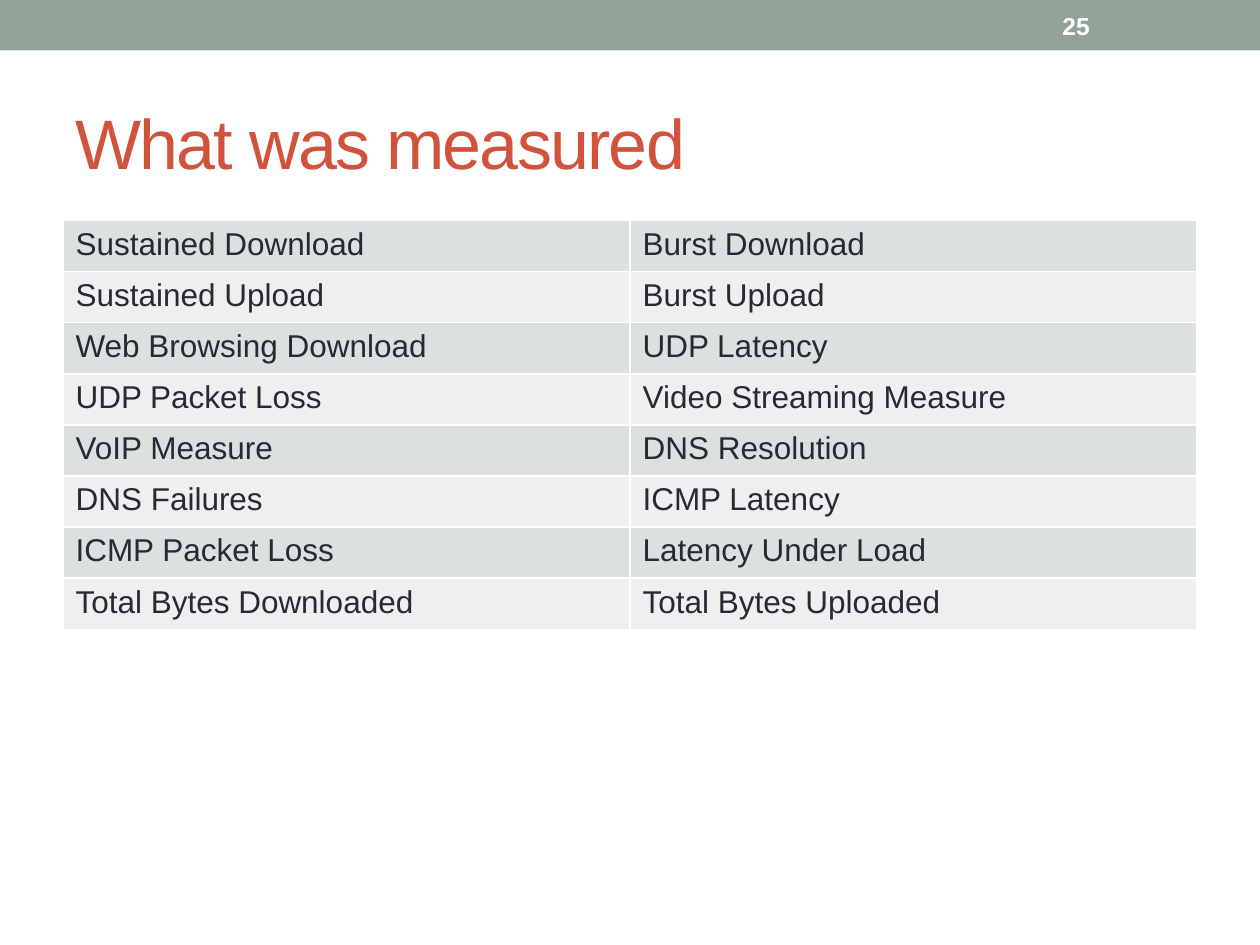
from lxml.etree import SubElement
from pptx import Presentation
from pptx.dml.color import RGBColor
from pptx.enum.shapes import MSO_SHAPE
from pptx.enum.text import MSO_ANCHOR
from pptx.oxml.ns import qn
from pptx.util import Pt

FONT = "Arial"
MEASURES = [
    ("Sustained Download", "Burst Download"),
    ("Sustained Upload", "Burst Upload"),
    ("Web Browsing Download", "UDP Latency"),
    ("UDP Packet Loss", "Video Streaming Measure"),
    ("VoIP Measure", "DNS Resolution"),
    ("DNS Failures", "ICMP Latency"),
    ("ICMP Packet Loss", "Latency Under Load"),
    ("Total Bytes Downloaded", "Total Bytes Uploaded"),
]
ROW_FILLS = ("DCE0DE", "EEF0EF")
ROW_HEIGHT = 29.2
COLUMN_WIDTH = 324


def color(value):
    return RGBColor.from_string(value)


def set_text(frame, text, size, text_color, bold=False):
    frame.text = text
    span = frame.paragraphs[0].runs[0]
    span.font.name = FONT
    span.font.size = Pt(size)
    span.font.bold = bold
    span.font.color.rgb = color(text_color)
    return span


def add_band(page, left, top, width, height, fill):
    band = page.shapes.add_shape(
        MSO_SHAPE.RECTANGLE, Pt(left), Pt(top), Pt(width), Pt(height))
    band.shadow.inherit = False
    band.fill.solid()
    band.fill.fore_color.rgb = color(fill)
    band.line.fill.background()


def add_label(page, left, top, width, height, text, size, text_color, bold=False):
    box = page.shapes.add_textbox(Pt(left), Pt(top), Pt(width), Pt(height))
    frame = box.text_frame
    frame.word_wrap = True
    frame.vertical_anchor = MSO_ANCHOR.MIDDLE
    return set_text(frame, text, size, text_color, bold)


def set_borders(cell, line_color, width):
    properties = cell._tc.get_or_add_tcPr()
    for index, side in enumerate(("lnL", "lnR", "lnT", "lnB")):
        line = properties.makeelement(qn(f"a:{side}"), {"w": str(Pt(width))})
        fill = SubElement(line, qn("a:solidFill"))
        SubElement(fill, qn("a:srgbClr"), val=line_color)
        # Borders come before the cell fill in the schema
        properties.insert(index, line)


def add_measures_table(page, left, top):
    columns = len(MEASURES[0])
    table = page.shapes.add_table(
        len(MEASURES), columns, Pt(left), Pt(top),
        Pt(columns * COLUMN_WIDTH), Pt(len(MEASURES) * ROW_HEIGHT)).table
    table.first_row = False
    for row_index, measures in enumerate(MEASURES):
        table.rows[row_index].height = Pt(ROW_HEIGHT)
        for column_index, measure in enumerate(measures):
            cell = table.cell(row_index, column_index)
            set_text(cell.text_frame, measure, 18, "292934")
            cell.fill.solid()
            cell.fill.fore_color.rgb = color(ROW_FILLS[row_index % 2])
            set_borders(cell, "FFFFFF", 1)


def main():
    deck = Presentation()
    deck.slide_width, deck.slide_height = Pt(720), Pt(540)
    page = deck.slides.add_slide(deck.slide_layouts[6])

    # Header band
    add_band(page, 0, 0, 720, 28.8, "93A299")

    # Title, with slightly tightened letters
    title = add_label(page, 36, 42, 648, 78, "What was measured", 40, "D2533C")
    title.font._element.set("spc", "-100")

    # Table of measures
    add_measures_table(page, 36, 126)

    # Page number
    add_label(page, 600, 1.5, 84, 26, "25", 14, "FFFFFF", bold=True)

    deck.save("out.pptx")


if __name__ == "__main__":
    main()
